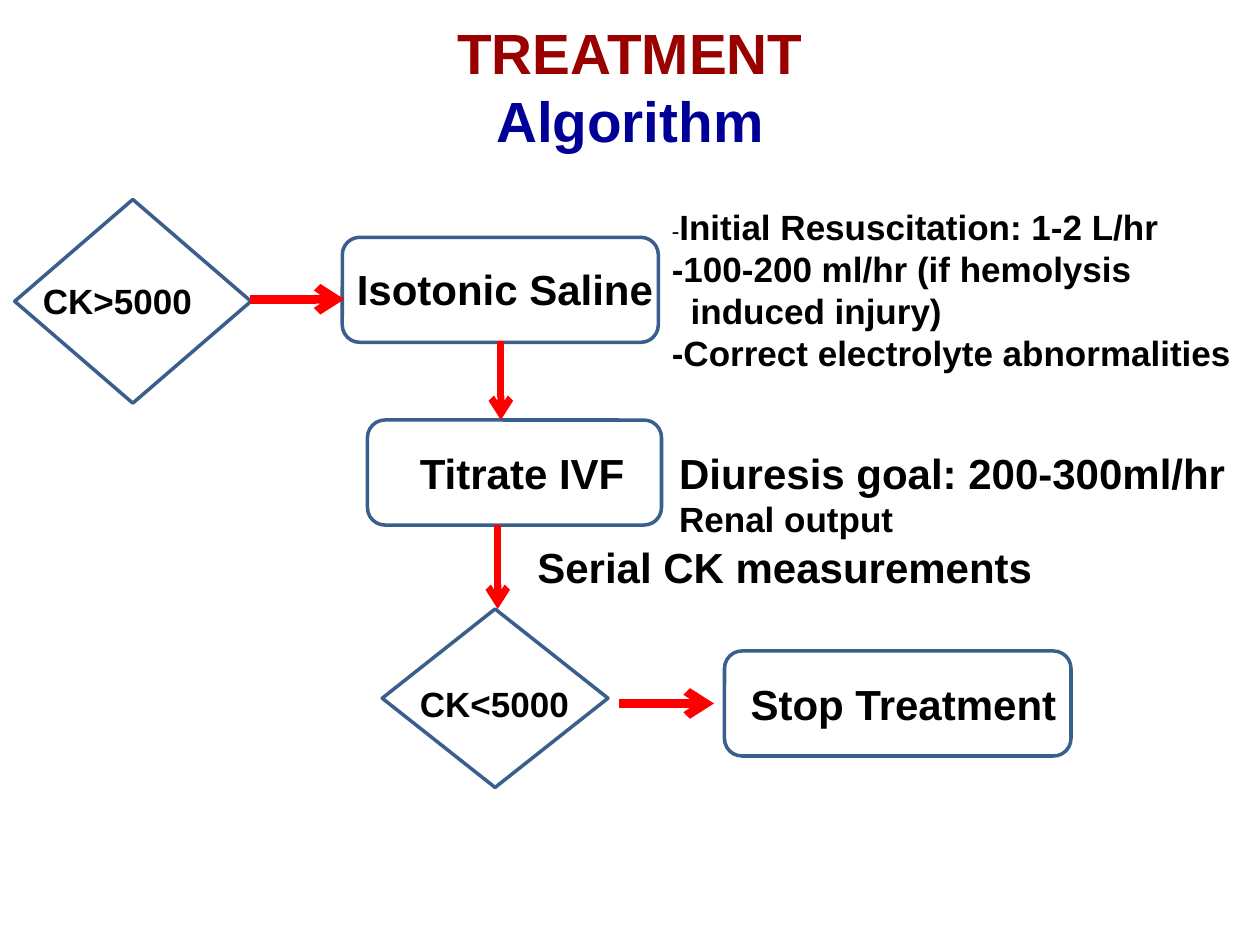
from pptx import Presentation
from pptx.dml.color import RGBColor
from pptx.enum.shapes import MSO_CONNECTOR, MSO_SHAPE
from pptx.enum.text import MSO_ANCHOR, PP_ALIGN
from pptx.oxml.ns import qn
from pptx.util import Inches, Pt
from lxml.etree import SubElement

BLACK = RGBColor(0x00, 0x00, 0x00)
WHITE = RGBColor(0xFF, 0xFF, 0xFF)
RED = RGBColor(0xFF, 0x00, 0x00)
MAROON = RGBColor(0x99, 0x00, 0x00)
NAVY = RGBColor(0x00, 0x00, 0x99)
STEEL = RGBColor(0x3A, 0x5F, 0x8C)

COLS, ROWS = 120, 90
WIDTH, HEIGHT = Inches(10), Inches(7.5)


def write(para, text, size=24, color=BLACK, bold=True, face="Arial"):
    run = para.add_run()
    run.text = text
    font = run.font
    font.size, font.bold, font.name = Pt(size), bold, face
    font.color.rgb = color


class Chart:
    def __init__(self, slide):
        self.slide = slide
        self.edge, self.fill, self.flow = STEEL, WHITE, RED

    def place(self, col, row, wide=0, high=0):
        x, y = WIDTH / COLS, HEIGHT / ROWS
        return [round(n) for n in (col * x, row * y, wide * x, high * y)]

    def node(self, kind, *cell):
        shape = self.slide.shapes.add_shape(kind, *self.place(*cell))
        shape.shadow.inherit = False
        shape.fill.solid()
        shape.fill.fore_color.rgb = self.fill
        shape.line.color.rgb = self.edge
        shape.line.width = Pt(2)

    def frame(self, *cell, wrap=True):
        frame = self.slide.shapes.add_textbox(*self.place(*cell)).text_frame
        frame.word_wrap = wrap
        return frame

    def label(self, text, *cell, wrap=True, **style):
        write(self.frame(*cell, wrap=wrap).paragraphs[0], text, **style)

    def arrow(self, col, row, across=0, down=0, width=4):
        start = self.place(col, row)[:2]
        end = self.place(col + across, row + down)[:2]
        link = self.slide.shapes.add_connector(MSO_CONNECTOR.STRAIGHT, *start, *end)
        link.line.color.rgb = self.flow
        link.line.width = Pt(width)
        SubElement(link.line._get_or_add_ln(), qn("a:tailEnd"), type="arrow")
        SubElement(link._element.spPr, qn("a:effectLst"))

    def title(self, top, rest):
        frame = self.frame(6, 0.6, 108, 15.1)
        frame.vertical_anchor = MSO_ANCHOR.MIDDLE
        para = frame.paragraphs[0]
        para.alignment = PP_ALIGN.CENTER
        write(para, top, size=32.4, color=MAROON)
        para.add_line_break()
        write(para, rest, size=32.4, color=NAVY)

    def fluids(self):
        frame = self.frame(62.8, 19, 57.2, 17.4)
        para = frame.paragraphs[0]
        write(para, "-", size=14, bold=False, face="Calibri")
        write(para, "Initial Resuscitation: 1-2 L/hr", size=20)
        for text, inset in (
            ("-100-200 ml/hr (if hemolysis", 0),
            ("induced injury)", 0.15),
            ("-Correct electrolyte abnormalities", 0),
        ):
            para = frame.add_paragraph()
            if inset:
                para._p.get_or_add_pPr().set("marL", str(Inches(inset)))
            write(para, text, size=20)

    def goal(self):
        frame = self.frame(63.5, 42, 56.6, 10.1)
        write(frame.paragraphs[0], "Diuresis goal: 200-300ml/hr")
        write(frame.add_paragraph(), "Renal output", size=20)


def main():
    deck = Presentation()
    deck.slide_width, deck.slide_height = WIDTH, HEIGHT
    chart = Chart(deck.slides.add_slide(deck.slide_layouts[6]))
    step, test = MSO_SHAPE.ROUNDED_RECTANGLE, MSO_SHAPE.DIAMOND

    chart.title("TREATMENT", "Algorithm")

    chart.node(test, 1.4, 19, 22.5, 19.4)
    chart.label("CK>5000", 2.9, 26, 21.1, 6, size=20)
    chart.node(step, 32.6, 22.6, 30.1, 10)
    chart.label("Isotonic Saline", 32.8, 24.5, 33.2, 6, wrap=False)
    chart.fluids()

    chart.node(step, 35, 40, 28, 10)
    chart.label("Titrate IVF", 38.8, 42, 22.1, 6, wrap=False)
    chart.goal()
    chart.label("Serial CK measurements", 50, 51, 61.9, 6)

    chart.node(test, 36.4, 58, 21.5, 17)
    chart.label("CK<5000", 38.8, 64.4, 20.3, 5.3, size=20)
    chart.node(step, 69, 62, 33, 10)
    chart.label("Stop Treatment", 70.3, 64, 31.8, 6, wrap=False)

    chart.arrow(23.8, 28.5, across=9, width=5)
    chart.arrow(47.7, 32.5, down=7.5)
    chart.arrow(47.4, 50, down=8)
    chart.arrow(59, 67, across=9, width=5)

    deck.save("out.pptx")


if __name__ == "__main__":
    main()
